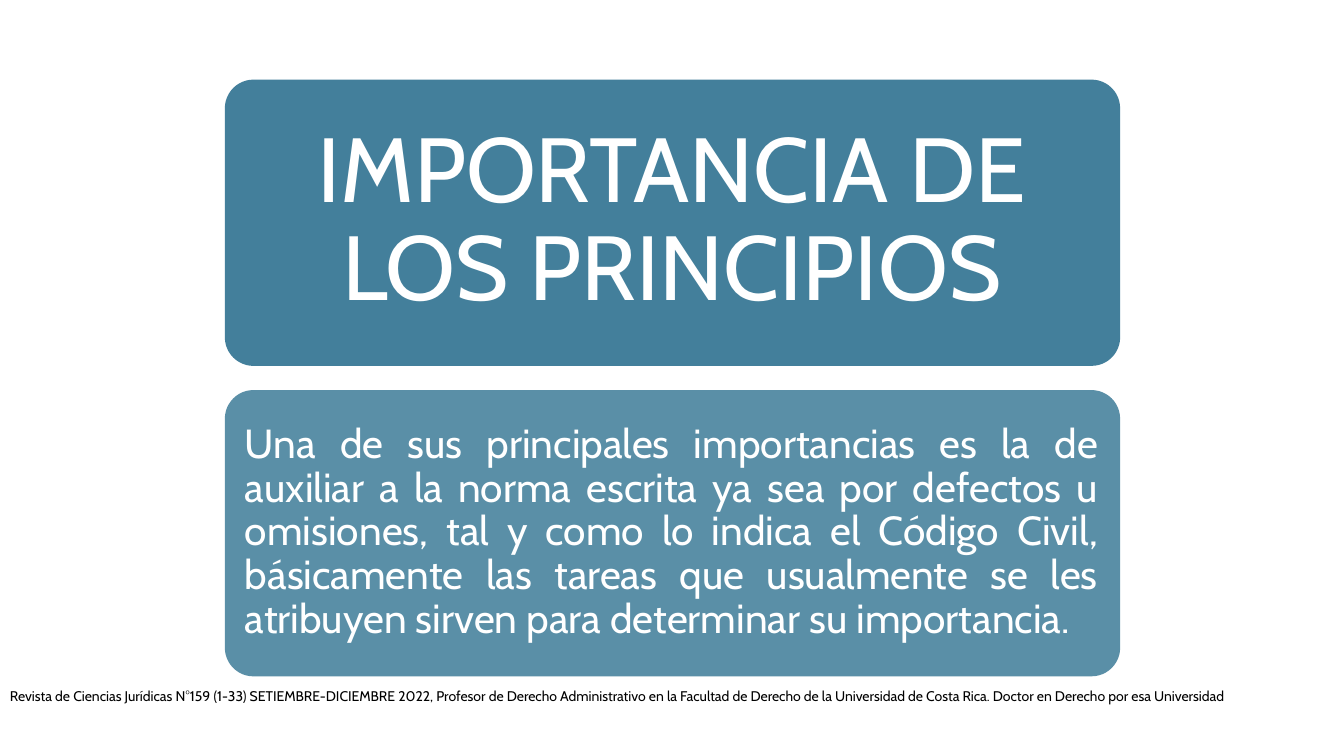
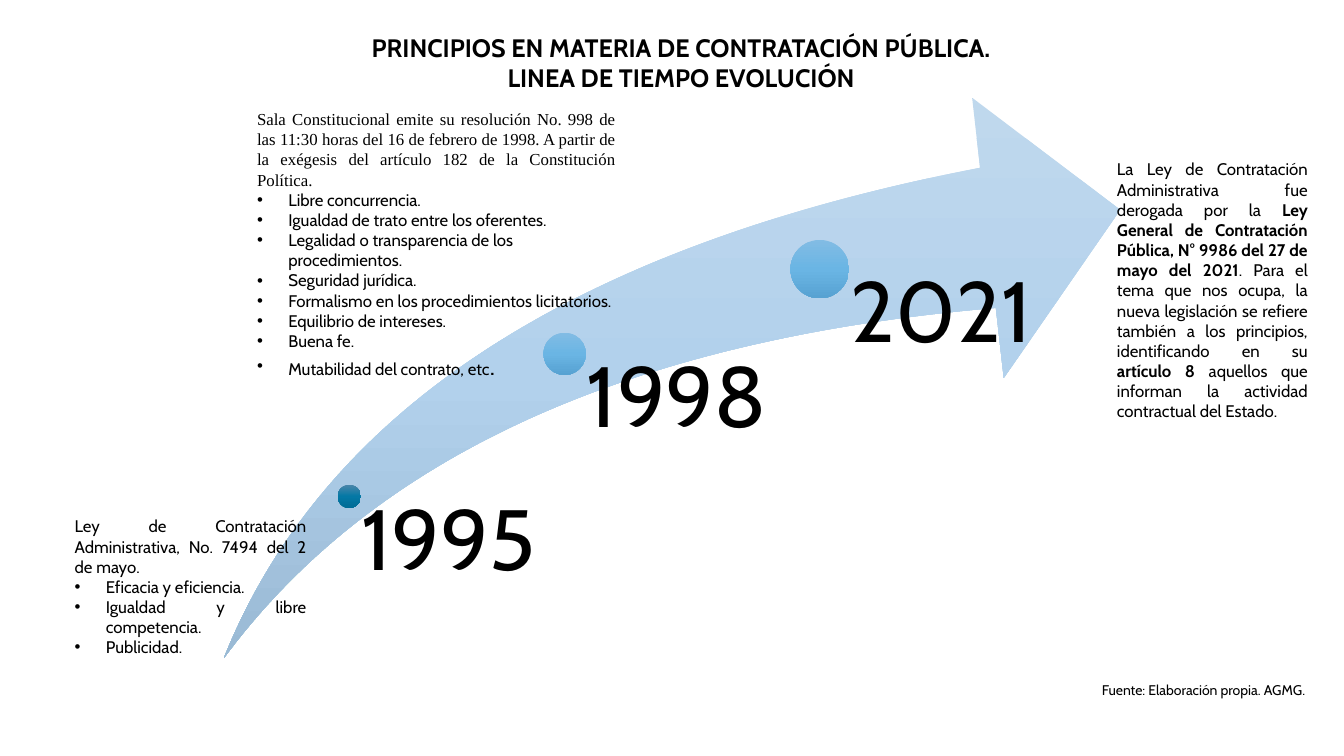
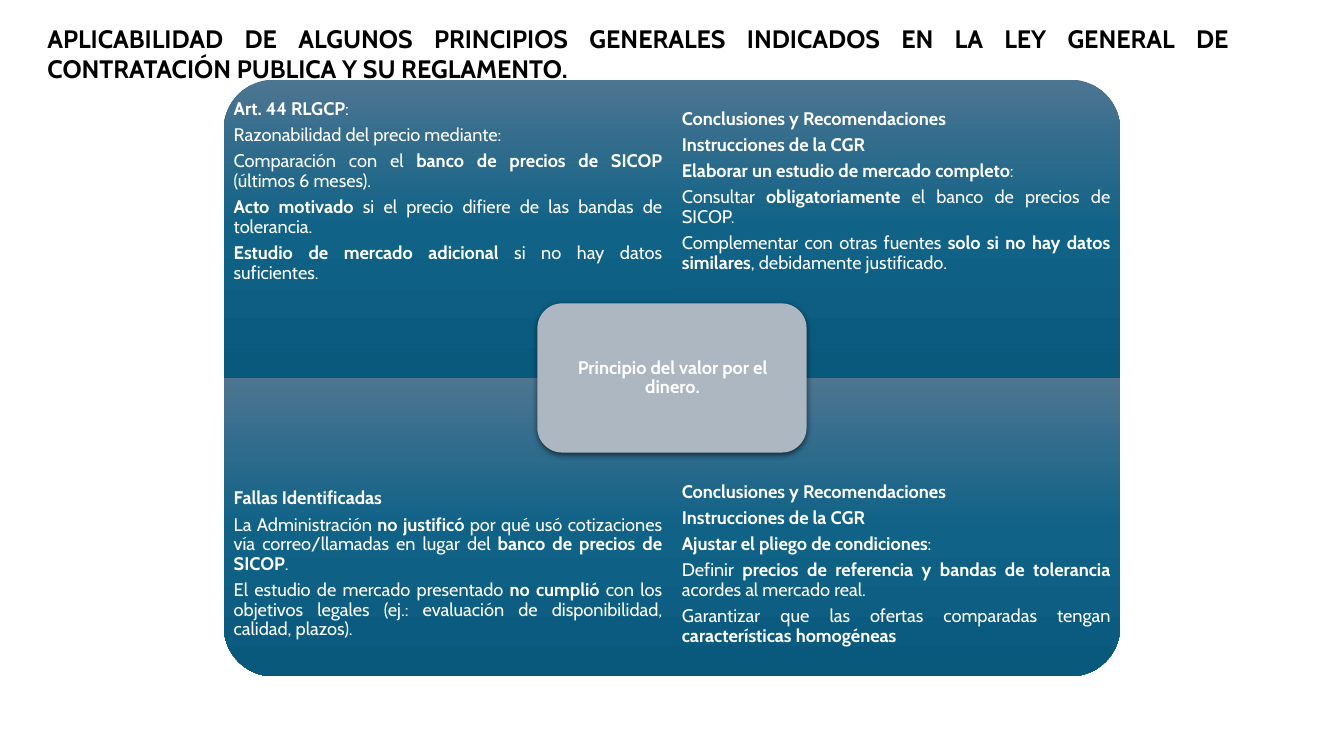
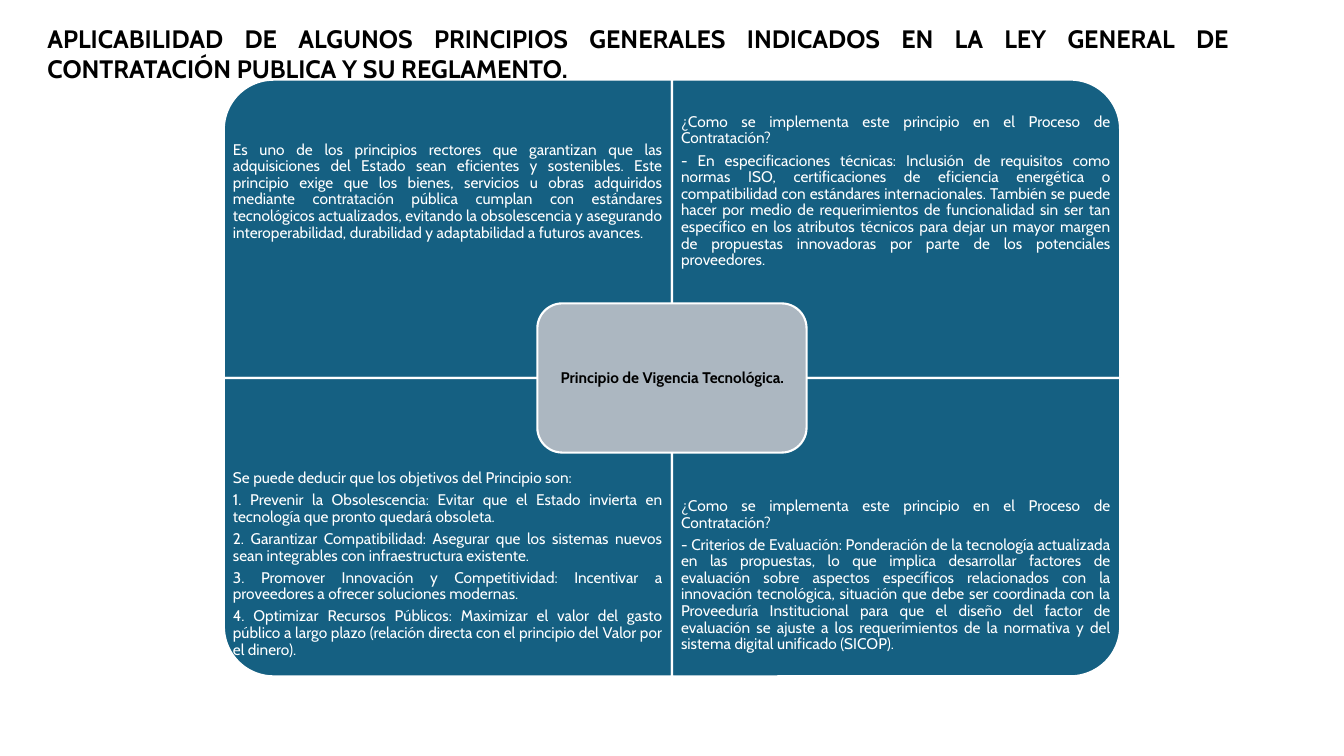
from dataclasses import dataclass

import pptx
import pptx.util
import pptx.dml.color
import pptx.enum.shapes
import pptx.enum.text
import pptx.oxml
import pptx.oxml.ns
from lxml import etree

Inches = pptx.util.Inches
Pt = pptx.util.Pt
qn = pptx.oxml.ns.qn
Shape = pptx.enum.shapes.MSO_SHAPE
Align = pptx.enum.text.PP_ALIGN
Anchor = pptx.enum.text.MSO_ANCHOR


@dataclass(frozen=True)
class Theme:
    font: str = "Cabin"
    serif: str = "Times New Roman"
    black: str = "000000"
    white: str = "FFFFFF"
    teal: str = "156082"
    gray: str = "ACB7C1"
    deep: tuple = ("4C7591", "106287", "09597D")
    dot: tuple = ("4B86AA", "0478A5", "006C96")
    sky: tuple = ("82BCE4", "6AB5E4", "57A2D2")
    pale: tuple = ("BFD8ED", "B2D1EC", "9ABAD5")
    hero: int = 65
    year: int = 61
    lead: int = 29
    title: int = 18
    quad: int = 13
    text: int = 12
    small: int = 11
    note: int = 10


class Deck:
    def __init__(self, theme):
        self.theme = theme
        self.file = pptx.Presentation()
        self.file.slide_width = Inches(13.33)
        self.file.slide_height = Inches(7.5)
        self.slide = None

    def start(self, layout):
        self.slide = self.file.slides.add_slide(self.file.slide_layouts[layout])

    def shape(self, kind, box, fill, line=None, alpha=None, turn=0, adjust=()):
        """Draw a preset shape; a tuple as fill makes a vertical gradient."""
        item = self.slide.shapes.add_shape(kind, *map(Inches, box))
        item.shadow.inherit = False
        item.rotation = turn
        for i, value in enumerate(adjust):
            item.adjustments[i] = value
        if isinstance(fill, tuple):
            self.blend(item, fill)
        else:
            item.fill.solid()
            item.fill.fore_color.rgb = pptx.dml.color.RGBColor.from_string(fill)
        if alpha:
            color = item.element.spPr.find(".//" + qn("a:srgbClr"))
            etree.SubElement(color, qn("a:alpha"), val=str(alpha * 1000))
        if line:
            item.line.color.rgb = pptx.dml.color.RGBColor.from_string(line)
            item.line.width = Pt(1.5)
        else:
            item.line.fill.background()
        return item

    def blend(self, item, colors):
        """Fill top to bottom, whatever the rotation of the shape."""
        item.fill.gradient()
        grad = item.element.spPr.find(qn("a:gradFill"))
        for child in list(grad):
            grad.remove(child)
        grad.set("rotWithShape", "0")
        stops = etree.SubElement(grad, qn("a:gsLst"))
        for i, color in enumerate(colors):
            stop = etree.SubElement(stops, qn("a:gs"), pos=str(i * 50000))
            etree.SubElement(stop, qn("a:srgbClr"), val=color)
        etree.SubElement(grad, qn("a:lin"), ang="5400000", scaled="0")

    def shade(self, item):
        effects = item.element.spPr.find(qn("a:effectLst"))
        outer = etree.SubElement(
            effects, qn("a:outerShdw"), blurRad=str(Pt(4.5)), dist=str(Pt(1.5)),
            dir="5400000", algn="ctr", rotWithShape="0")
        color = etree.SubElement(outer, qn("a:srgbClr"), val=self.theme.black)
        etree.SubElement(color, qn("a:alpha"), val="63000")

    def hold(self, idx, box, lines, size, **style):
        """Move a placeholder to the front and fill it."""
        item = self.slide.placeholders[idx]
        item.left, item.top, item.width, item.height = map(Inches, box)
        self.slide.shapes.element.append(item.element)
        return self.put(item.text_frame, lines, size, **style)

    def text(self, box, lines, size, **style):
        item = self.slide.shapes.add_textbox(*map(Inches, box))
        return self.put(item.text_frame, lines, size, **style)

    def put(self, frame, lines, size, color=None, align=Align.LEFT, bold=False,
            pad=(0.1, 0.05, 0.1, 0.05), middle=False, tight=False):
        """Set paragraphs: *stars* mark bold runs, a leading • makes a bullet."""
        frame.word_wrap = True
        frame.auto_size = pptx.enum.text.MSO_AUTO_SIZE.NONE
        frame.vertical_anchor = Anchor.MIDDLE if middle else Anchor.TOP
        (frame.margin_left, frame.margin_top,
         frame.margin_right, frame.margin_bottom) = map(Inches, pad)
        for i, line in enumerate(lines):
            para = frame.paragraphs[0] if i == 0 else frame.add_paragraph()
            self.mark(para, line.startswith("•"))
            para.alignment = align
            para.space_before = Pt(0)
            para.space_after = Pt(round(size * 0.35, 2) if tight else 0)
            para.line_spacing = 0.9 if tight else 1.0
            for n, part in enumerate(line.lstrip("•").split("*")):
                if part:
                    self.run(para, part, size, color, bold or n % 2 == 1)
        return frame.paragraphs

    def mark(self, para, bullet):
        props = para._p.get_or_add_pPr()
        indent = Inches(0.31) if bullet else 0
        props.set("marL", str(indent))
        props.set("indent", str(-indent))
        if bullet:
            etree.SubElement(props, qn("a:buFont"), typeface="Arial")
            etree.SubElement(props, qn("a:buChar"), char="•")
        else:
            etree.SubElement(props, qn("a:buNone"))

    def run(self, para, words, size, color=None, bold=False):
        run = para.add_run()
        run.text = words
        run.font.name = self.theme.font
        run.font.size = Pt(size)
        run.font.bold = bold
        run.font.color.rgb = pptx.dml.color.RGBColor.from_string(
            color or self.theme.black)

    def matrix(self, cells, core, size, fill, pad, line=None, ink=None, drop=0):
        """Draw four quadrants round a core; drop lowers the last text."""
        theme = self.theme
        left, top, wide, high, tall = 2.22, 0.79, 4.445, 2.96, 2.22
        self.hold(0, (0.37, 0.18, 11.92, 0.71), [
            "APLICABILIDAD DE ALGUNOS PRINCIPIOS GENERALES INDICADOS EN LA LEY "
            "GENERAL DE CONTRATACIÓN PUBLICA Y SU REGLAMENTO."],
            theme.title, align=Align.JUSTIFY, bold=True)
        for i, (lines, turn) in enumerate(zip(cells, (270, 0, 180, 90))):
            row, col = divmod(i, 2)
            x, y = left + col * wide, top + row * high
            box = (x, y, wide, high)
            if turn % 180:
                shift = (wide - high) / 2
                box = (x + shift, y - shift, high, wide)
            self.shape(Shape.ROUND_1_RECTANGLE, box, fill, line, turn=turn)
            head = pad + (drop if i == 3 else 0)
            self.text((x, y + row * (high - tall), wide, tall), lines, size,
                      color=theme.white, align=Align.JUSTIFY,
                      pad=(pad, head, pad, pad), middle=True, tight=True)
        hub = self.shape(Shape.ROUNDED_RECTANGLE, (5.33, 3.01, 2.67, 1.48),
                         theme.gray, line)
        self.text((5.41, 3.08, 2.52, 1.34), [core], size, color=ink,
                  align=Align.CENTER, bold=True, pad=(0.05,) * 4, middle=True,
                  tight=True)
        return hub


def values(deck):
    theme = deck.theme
    deck.start(1)
    panels = (
        (0.79, 80, theme.hero, Align.CENTER, 0.27, "IMPORTANCIA DE LOS PRINCIPIOS"),
        (3.87, 70, theme.lead, Align.JUSTIFY, 0.12,
         "Una de sus principales importancias es la de auxiliar a la norma escrita "
         "ya sea por defectos u omisiones, tal y como lo indica el Código Civil, "
         "básicamente las tareas que usualmente se les atribuyen sirven para "
         "determinar su importancia."),
    )
    for idx, (top, alpha, size, align, pad, words) in enumerate(panels):
        deck.shape(Shape.ROUNDED_RECTANGLE, (2.23, top, 8.88, 2.84), theme.teal,
                   alpha=alpha, adjust=(0.1,))
        deck.hold(idx, (2.31, top + 0.08, 8.71, 2.67), [words], size,
                  color=theme.white, align=align, pad=(pad,) * 4, middle=True,
                  tight=True)
    deck.text((0, 6.77, 12.73, 0.27), [
        "Revista de Ciencias Jurídicas N°159 (1-33) SETIEMBRE-DICIEMBRE 2022, "
        "Profesor de Derecho Administrativo en la Facultad de Derecho de la "
        "Universidad de Costa Rica. Doctor en Derecho por esa Universidad"],
        theme.note)


def history(deck):
    theme = deck.theme
    deck.start(3)
    deck.hold(0, (3.42, 0.27, 6.67, 0.71), [
        "PRINCIPIOS EN MATERIA DE CONTRATACIÓN PÚBLICA.",
        "LINEA DE TIEMPO EVOLUCIÓN"], theme.title, align=Align.CENTER, bold=True)
    deck.shape(Shape.SWOOSH_ARROW, (2.22, 0.97, 8.89, 5.56), theme.pale,
               adjust=(0.25, 0.25))
    base = 6.53
    for year, x, y, size, fill, pad in (
            ("1995", 3.35, 4.81, 0.23, theme.dot, 0.12),
            ("1998", 5.39, 3.3, 0.42, theme.sky, 0.22),
            ("2021", 7.84, 2.38, 0.58, theme.sky, 0.31)):
        deck.shape(Shape.OVAL, (x, y, size, size), fill)
        mid = y + size / 2
        deck.text((x + size / 2, mid, 2.13, base - mid), [year], theme.year,
                  pad=(pad, 0, 0, 0), tight=True)
    deck.hold(1, (0.64, 5.07, 2.5, 1.82), [
        "Ley de Contratación Administrativa, No. 7494 del 2 de mayo.",
        "•Eficacia y eficiencia.",
        "•Igualdad y libre competencia.",
        "•Publicidad."], theme.text, align=Align.JUSTIFY)
    ruling = deck.hold(2, (2.45, 1.03, 3.76, 3.03), [
        "Sala Constitucional emite su resolución No. 998 de las 11:30 horas del 16 "
        "de febrero de 1998. A partir de la exégesis del artículo 182 de la "
        "Constitución Política.",
        "•Libre concurrencia.",
        "•Igualdad de trato entre los oferentes.",
        "•Legalidad o transparencia de los procedimientos.",
        "•Seguridad jurídica.",
        "•Formalismo en los procedimientos licitatorios.",
        "•Equilibrio de intereses.",
        "•Buena fe.",
        "•Mutabilidad del contrato, etc"], theme.text)
    ruling[0].alignment = Align.JUSTIFY
    ruling[0].runs[0].font.name = theme.serif
    deck.run(ruling[-1], ".", theme.title)
    deck.text((10.98, 1.53, 2.09, 2.73), [
        "La Ley de Contratación Administrativa fue derogada por la *Ley General de "
        "Contratación Pública, N° 9986 del 27 de mayo del 2021*. Para el tema que "
        "nos ocupa, la nueva legislación se refiere también a los principios, "
        "identificando en su *artículo 8* aquellos que informan la actividad "
        "contractual del Estado."], theme.text, align=Align.JUSTIFY)
    deck.text((10.83, 6.71, 2.5, 0.27), ["Fuente: Elaboración propia. AGMG."],
              theme.note)


def money(deck):
    theme = deck.theme
    deck.start(5)
    advice = ["*Conclusiones y Recomendaciones*", "*Instrucciones de la CGR*"]
    cells = (
        ["*Art. 44 RLGCP*:",
         "Razonabilidad del precio mediante:",
         "Comparación con el *banco de precios de SICOP* (últimos 6 meses).",
         "*Acto motivado* si el precio difiere de las bandas de tolerancia.",
         "*Estudio de mercado adicional* si no hay datos suficientes."],
        advice + [
            "*Elaborar un estudio de mercado completo*:",
            "Consultar *obligatoriamente* el banco de precios de SICOP.",
            "Complementar con otras fuentes *solo si no hay datos similares*, "
            "debidamente justificado."],
        ["*Fallas Identificadas*",
         "La Administración *no justificó* por qué usó cotizaciones vía "
         "correo/llamadas en lugar del *banco de precios de SICOP*.",
         "El estudio de mercado presentado *no cumplió* con los objetivos legales "
         "(ej.: evaluación de disponibilidad, calidad, plazos)."],
        advice + [
            "*Ajustar el pliego de condiciones*:",
            "Definir *precios de referencia y bandas de tolerancia* acordes al "
            "mercado real.",
            "Garantizar que las ofertas comparadas tengan *características "
            "homogéneas*"],
    )
    hub = deck.matrix(cells, "Principio del valor por el dinero.", theme.quad,
                      theme.deep, 0.1, ink=theme.white)
    deck.shade(hub)


def tech(deck):
    theme = deck.theme
    deck.start(5)
    ask = "¿Como se implementa este principio en el Proceso de Contratación?"
    cells = (
        ["Es uno de los principios rectores que garantizan que las adquisiciones "
         "del Estado sean eficientes y sostenibles. Este principio exige que los "
         "bienes, servicios u obras adquiridos mediante contratación pública "
         "cumplan con estándares tecnológicos actualizados, evitando la "
         "obsolescencia y asegurando interoperabilidad, durabilidad y "
         "adaptabilidad a futuros avances."],
        [ask,
         "- En especificaciones técnicas: Inclusión de requisitos como normas ISO, "
         "certificaciones de eficiencia energética o compatibilidad con estándares "
         "internacionales. También se puede hacer por medio de requerimientos de "
         "funcionalidad sin ser tan específico en los atributos técnicos para "
         "dejar un mayor margen de propuestas innovadoras por parte de los "
         "potenciales proveedores."],
        ["Se puede deducir que los objetivos del Principio son:",
         "1. Prevenir la Obsolescencia: Evitar que el Estado invierta en "
         "tecnología que pronto quedará obsoleta.",
         "2. Garantizar Compatibilidad: Asegurar que los sistemas nuevos sean "
         "integrables con infraestructura existente.",
         "3. Promover Innovación y Competitividad: Incentivar a proveedores a "
         "ofrecer soluciones modernas.",
         "4. Optimizar Recursos Públicos: Maximizar el valor del gasto público a "
         "largo plazo (relación directa con el principio del Valor por el "
         "dinero)."],
        [ask,
         "- Criterios de Evaluación: Ponderación de la tecnología actualizada en "
         "las propuestas, lo que implica desarrollar factores de evaluación sobre "
         "aspectos específicos relacionados con la innovación tecnológica, "
         "situación que debe ser coordinada con la Proveeduría Institucional para "
         "que el diseño del factor de evaluación se ajuste a los requerimientos de "
         "la normativa y del sistema digital unificado (SICOP)."],
    )
    deck.matrix(cells, "Principio de Vigencia Tecnológica.", theme.small,
                theme.teal, 0.09, line=theme.white, drop=0.22)


def main():
    deck = Deck(Theme())
    for build in (values, history, money, tech):
        build(deck)
    deck.file.save("out.pptx")


if __name__ == "__main__":
    main()
